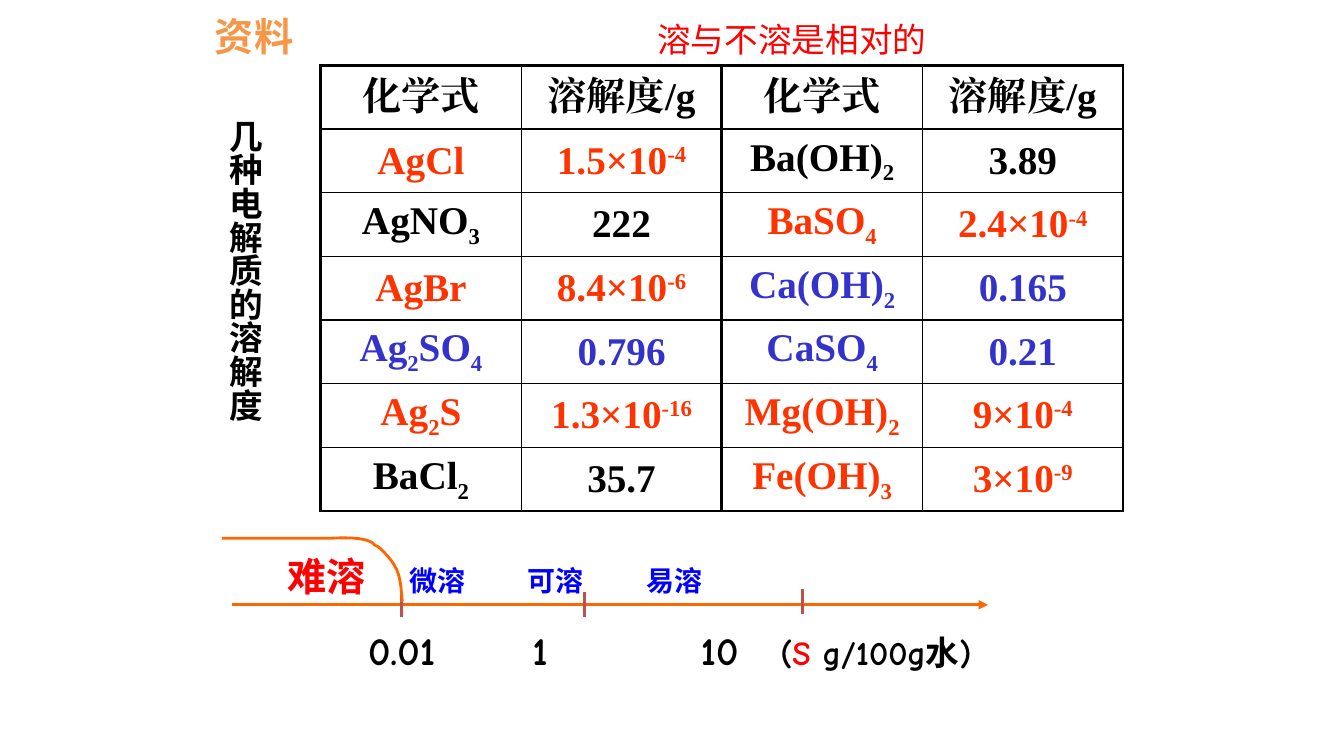
"""Build a slide on the solubility of some electrolytes."""
import dataclasses
import itertools
import typing

import lxml.etree
import pptx
import pptx.dml.color
import pptx.enum.shapes
import pptx.enum.text
import pptx.oxml.ns
import pptx.presentation
import pptx.shapes.autoshape
import pptx.slide
import pptx.table
import pptx.text.text
import pptx.util

RGB = pptx.dml.color.RGBColor
ALIGN = pptx.enum.text.PP_ALIGN
ANCHOR = pptx.enum.text.MSO_ANCHOR
SCALE = 9144

BLACK = RGB(0x00, 0x00, 0x00)
WHITE = RGB(0xFF, 0xFF, 0xFF)
RED = RGB(0xFF, 0x00, 0x00)
BLUE = RGB(0x00, 0x00, 0xFF)
AMBER = RGB(0xF7, 0x96, 0x46)
ORANGE = RGB(0xFF, 0x66, 0x00)
BRICK = RGB(0xC0, 0x50, 0x4D)
POOR = RGB(0xFF, 0x33, 0x00)
SLIGHT = RGB(0x33, 0x33, 0xCC)

SERIF = "Times New Roman"
HAN = "Noto Sans CJK SC"
COMIC = "Comic Neue"


@dataclasses.dataclass
class Salt:
    """A formula, its solubility and the colour of its class."""
    name: str
    value: str
    tone: RGB


@dataclasses.dataclass
class Part:
    """A stretch of text in one style."""
    text: str
    size: int
    tone: RGB
    face: str
    bold: bool = True
    base: int = 0


@dataclasses.dataclass
class Line:
    """A straight stroke on the scale."""
    x1: int
    y1: int
    x2: int
    y2: int
    tone: RGB
    arrow: bool = False


LEFT = [
    Salt("AgCl", "1.5×10^-4", POOR),
    Salt("AgNO3", "222", BLACK),
    Salt("AgBr", "8.4×10^-6", POOR),
    Salt("Ag2SO4", "0.796", SLIGHT),
    Salt("Ag2S", "1.3×10^-16", POOR),
    Salt("BaCl2", "35.7", BLACK),
]
RIGHT = [
    Salt("Ba(OH)2", "3.89", BLACK),
    Salt("BaSO4", "2.4×10^-4", POOR),
    Salt("Ca(OH)2", "0.165", SLIGHT),
    Salt("CaSO4", "0.21", SLIGHT),
    Salt("Mg(OH)2", "9×10^-4", POOR),
    Salt("Fe(OH)3", "3×10^-9", POOR),
]
LINES = [
    Line(230, 600, 980, 600, ORANGE, True),
    Line(398, 587, 398, 612, BRICK),
    Line(580, 587, 580, 612, BRICK),
    Line(796, 584, 796, 609, BRICK),
]
CURVE = [
    [(399, 597), (397, 574), (397, 565), (382, 549)],
    [(382, 549), (378, 545), (377, 543), (372, 541)],
    [(372, 541), (366, 531), (331, 534), (327, 534)],
    [(327, 534), (291, 534), (256, 534), (220, 534)],
]
GRADES = [Part("难溶", 28, RED, HAN)] + [
    Part("\t" + word, 20, BLUE, HAN) for word in ("微溶", "可溶", "易溶")]
MARKS = [
    Part("0.01\t1\t10\t", 28, BLACK, COMIC),
    Part("(", 24, BLACK, COMIC),
    Part("S", 24, RED, COMIC),
    Part(" g/100g水)", 24, BLACK, COMIC),
]


def px(size: float) -> pptx.util.Emu:
    """Turn px into EMU."""
    return pptx.util.Emu(round(size * SCALE))


def add(parent: typing.Any, tag: str, **attrs: str) -> typing.Any:
    """Append a drawing element to its parent."""
    return lxml.etree.SubElement(parent, pptx.oxml.ns.qn("a:" + tag), attrs)


def write(para: pptx.text.text._Paragraph, parts: list[Part]) -> None:
    """Fill a paragraph with styled parts."""
    for part in parts:
        run = para.add_run()
        run.text = part.text
        font = run.font
        font.size, font.bold, font.name = pptx.util.Pt(part.size), part.bold, part.face
        font.color.rgb = part.tone
        props = run._r.get_or_add_rPr()
        add(props, "ea", typeface=part.face)
        if part.base:
            props.set("baseline", str(part.base * 1000))


def split(text: str, tone: RGB, value: bool) -> list[Part]:
    """Raise the power of a value or lower the digits of a formula."""
    if value:
        stem, _, power = text.partition("^")
        pairs = [(stem, 0), (power, 30)]
    else:
        pairs = [("".join(group), -25 if digit else 0)
                 for digit, group in itertools.groupby(text, str.isdigit)]
    return [Part(bit, 28, tone, SERIF, base=base) for bit, base in pairs if bit]


def edge(cell: pptx.table._Cell, row: int, col: int, last: int) -> None:
    """Draw the four borders of a cell."""
    props = cell._tc.get_or_add_tcPr()
    thick = {"lnL": col % 2 == 0, "lnR": col % 2 == 1,
             "lnT": row == 0, "lnB": row == last}
    for spot, (tag, heavy) in enumerate(thick.items()):
        line = add(props, tag, w=str(pptx.util.Pt(2.25 if heavy else 1)))
        add(add(line, "solidFill"), "srgbClr", val=str(BLACK))
        props.insert(spot, line)


def grid(slide: pptx.slide.Slide) -> None:
    """Draw the table of salts."""
    head = Salt("化学式", "溶解度/g", BLACK)
    pairs = list(zip([head] + LEFT, [head] + RIGHT))
    count = len(pairs)
    table = slide.shapes.add_table(
        count, 4, px(318), px(65), px(4 * 199), px(count * 63)).table
    table.first_row = table.horz_banding = False
    for row, pair in enumerate(pairs):
        for col in range(4):
            salt = pair[col // 2]
            value = col % 2 == 1
            cell = table.cell(row, col)
            cell.fill.background()
            cell.vertical_anchor = ANCHOR.MIDDLE
            para = cell.text_frame.paragraphs[0]
            para.alignment = ALIGN.CENTER
            para.space_before = pptx.util.Pt(5.6)
            write(para, split(salt.value if value else salt.name, salt.tone, value))
            edge(cell, row, col, count - 1)


def label(slide: pptx.slide.Slide, left: int, top: int, wide: int,
          tabs: list[int], parts: list[Part]) -> None:
    """Place a row of labels set out by tab stops."""
    frame = slide.shapes.add_textbox(px(left), px(top), px(wide), px(57)).text_frame
    frame.word_wrap = True
    frame.margin_left = frame.margin_right = 0
    para = frame.paragraphs[0]
    stops = add(para._p.get_or_add_pPr(), "tabLst")
    for tab in tabs:
        add(stops, "tab", pos=str(px(tab - left)), algn="l")
    write(para, parts)


def stroke(slide: pptx.slide.Slide, line: Line) -> None:
    """Draw one line of the scale."""
    link = slide.shapes.add_connector(
        pptx.enum.shapes.MSO_CONNECTOR.STRAIGHT,
        px(line.x1), px(line.y1), px(line.x2), px(line.y2))
    link.line.color.rgb = line.tone
    link.line.width = pptx.util.Pt(2.25)
    if line.arrow:
        add(link.line._get_or_add_ln(), "tailEnd", type="triangle")
    add(link.element.spPr, "effectLst")


def bend(slide: pptx.slide.Slide) -> None:
    """Draw the curve that bounds the least soluble class."""
    dots = []
    for a, b, c, d in CURVE:
        for step in range(1, 9):
            t = step / 8
            u = 1 - t
            dots.append(tuple(
                px(u**3 * a[i] + 3 * u * u * t * b[i] + 3 * u * t * t * c[i] + t**3 * d[i])
                for i in (0, 1)))
    start = CURVE[0][0]
    pen = slide.shapes.build_freeform(px(start[0]), px(start[1]), scale=1.0)
    pen.add_line_segments(dots, close=False)
    shape = pen.convert_to_shape()
    shape.shadow.inherit = False
    shape.fill.background()
    shape.line.color.rgb = ORANGE
    shape.line.width = pptx.util.Pt(2)


def block(shape: typing.Any, box: tuple[int, int, int, int],
          part: Part, space: float, wrap: bool = False) -> None:
    """Place a shape and give it one styled line."""
    shape.left, shape.top, shape.width, shape.height = map(px, box)
    frame = shape.text_frame
    frame.word_wrap = wrap
    frame.vertical_anchor = ANCHOR.TOP
    para = frame.paragraphs[0]
    para.line_spacing = space
    write(para, [part])


def main() -> None:
    """Build and save the slide."""
    deck = pptx.Presentation()
    deck.slide_width, deck.slide_height = px(1333), px(750)
    slide = deck.slides.add_slide(deck.slide_layouts[5])
    title = slide.shapes.title
    block(title, (642, 2, 287, 62), Part("溶与不溶是相对的", 24, RED, "Arial", False), 1.3)
    title.text_frame.paragraphs[0].alignment = ALIGN.LEFT
    label(slide, 285, 543, 747, [406, 523, 641], GRADES)
    for line in LINES:
        stroke(slide, line)
    label(slide, 365, 616, 748, [528, 695, 774], MARKS)
    bend(slide)
    grid(slide)
    tag = slide.shapes.add_shape(pptx.enum.shapes.MSO_SHAPE.RECTANGLE, 0, 0, 0, 0)
    tag.shadow.inherit = False
    tag.fill.solid()
    tag.fill.fore_color.rgb = WHITE
    tag.line.fill.background()
    block(tag, (198, 7, 108, 57), Part("资料", 28, AMBER, "Calibri"), 1.0, True)
    tag.text_frame.paragraphs[0].alignment = ALIGN.CENTER
    side = slide.shapes.add_textbox(0, 0, 0, 0)
    block(side, (208, 109, 72, 311), Part("几种电解质的溶解度", 24, BLACK, HAN), 1.3)
    side.element.txBody.bodyPr.set("vert", "eaVert")
    deck.save("out.pptx")


if __name__ == "__main__":
    main()
